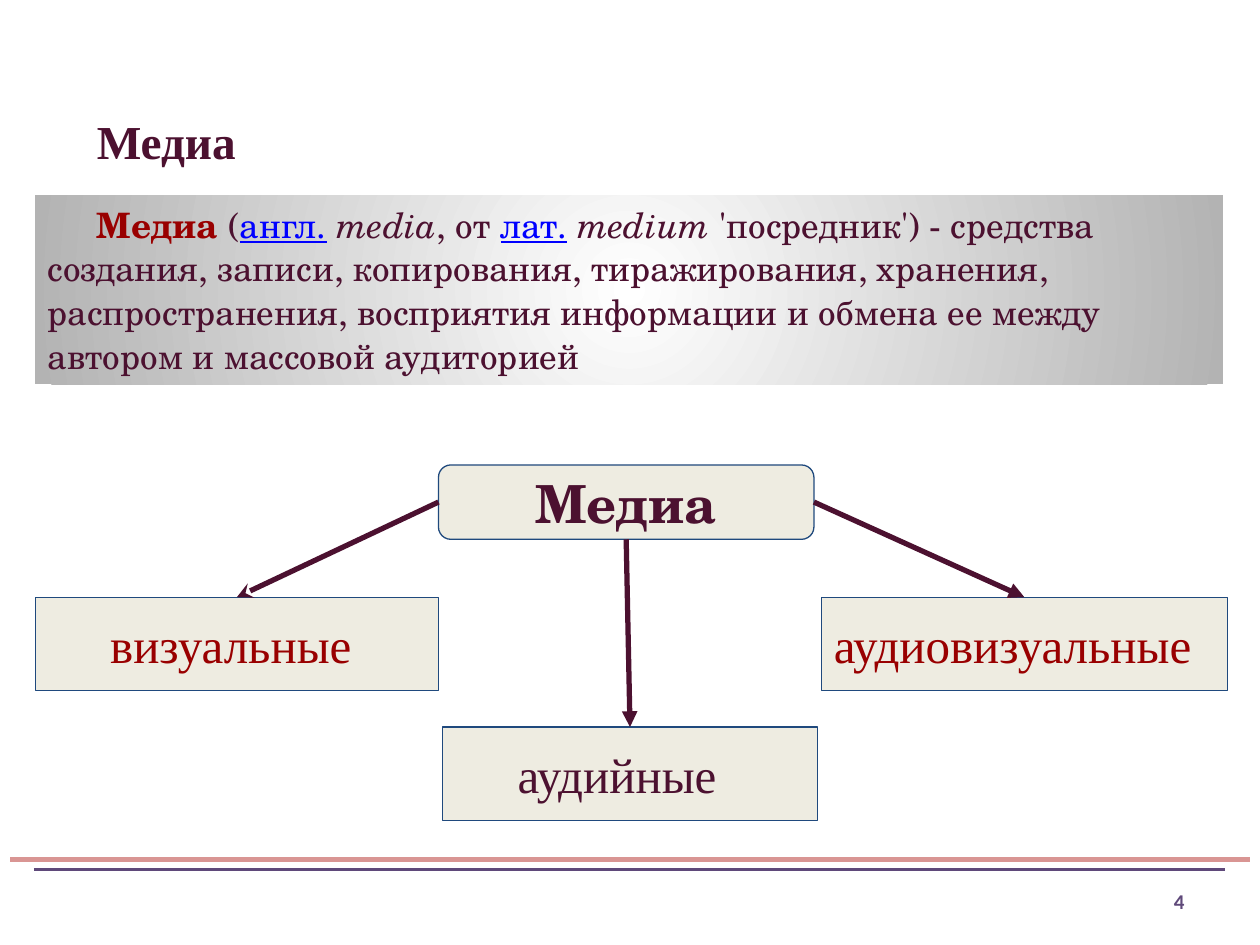
from lxml import etree
from pptx import Presentation
from pptx.dml.color import RGBColor
from pptx.enum.shapes import MSO_CONNECTOR, MSO_SHAPE
from pptx.enum.text import MSO_ANCHOR, PP_ALIGN
from pptx.oxml.ns import qn
from pptx.util import Inches, Pt

LINE = MSO_CONNECTOR.STRAIGHT
RECT, ROUND = MSO_SHAPE.RECTANGLE, MSO_SHAPE.ROUNDED_RECTANGLE
TOP, MID = MSO_ANCHOR.TOP, MSO_ANCHOR.MIDDLE
LEFT, CENTER, RIGHT, JUST = (PP_ALIGN.LEFT, PP_ALIGN.CENTER,
                             PP_ALIGN.RIGHT, PP_ALIGN.JUSTIFY)
PLUM = RGBColor(0x4C, 0x11, 0x30)
RED = RGBColor(0x99, 0x00, 0x00)
BLUE = RGBColor(0x00, 0x00, 0xFF)
NAVY = RGBColor(0x1F, 0x49, 0x7D)
CREAM = RGBColor(0xEE, 0xEC, 0xE1)
ROSE = RGBColor(0xD9, 0x95, 0x93)
VIOLET = RGBColor(0x5F, 0x49, 0x7A)
WHITE = RGBColor(0xFF, 0xFF, 0xFF)
GREY = RGBColor(0xB3, 0xB3, 0xB3)
SERIF, SCHOOL, SANS = "Times New Roman", "TeX Gyre Schola", "Calibri"


def add_run(para, text, font=SERIF, size=28, color=PLUM, bold=False,
            italic=False, under=False):
    run = para.add_run()
    run.text = text
    face = run.font
    face.name, face.size, face.bold = font, Pt(size), bold
    face.italic, face.underline = italic, under
    face.color.rgb = color


def set_para(shape, align=LEFT, anchor=MID, pad=0.05, margin=0, first=0):
    frame = shape.text_frame
    frame.word_wrap = True
    frame.vertical_anchor = anchor
    frame.margin_left = frame.margin_right = Inches(0.1)
    frame.margin_top = frame.margin_bottom = Inches(pad)
    para = frame.paragraphs[0]
    para.alignment = align
    props = para._p.get_or_add_pPr()
    props.set("marL", str(Inches(margin)))
    props.set("indent", str(Inches(first)))
    return para


def add_line(slide, start, end, color, width, head=None):
    line = slide.shapes.add_connector(
        LINE, *(Inches(v) for v in (*start, *end)))
    line.line.color.rgb = color
    line.line.width = Pt(width)
    if head:
        etree.SubElement(line.line._get_or_add_ln(), qn("a:tailEnd"), type=head)
    etree.SubElement(line._element.spPr, qn("a:effectLst"))
    return line


def add_label(slide, box, text, align=LEFT, margin=0, **style):
    label = slide.shapes.add_textbox(*(Inches(v) for v in box))
    add_run(set_para(label, align, margin=margin), text, **style)


def add_box(slide, box, text, kind=RECT, align=CENTER, margin=0, **style):
    node = slide.shapes.add_shape(kind, *(Inches(v) for v in box))
    node.shadow.inherit = False
    node.fill.solid()
    node.fill.fore_color.rgb = CREAM
    node.line.color.rgb = NAVY
    node.line.width = Pt(0.75)
    add_run(set_para(node, align, pad=0.1, margin=margin), text, **style)
    return node


def add_term(slide, box):
    panel = slide.shapes.add_shape(RECT, *(Inches(v) for v in box))
    panel.shadow.inherit = False
    panel.line.fill.background()
    # Radial fill, light in the middle
    panel.fill.gradient()
    for stop, color, pos in zip(panel.fill.gradient_stops, (WHITE, GREY), (0, 1)):
        stop.color.rgb = color
        stop.position = pos
    grad = panel._element.spPr.find(qn("a:gradFill"))
    radial = etree.Element(qn("a:path"), {"path": "circle"})
    etree.SubElement(radial, qn("a:fillToRect"),
                     {side: "50000" for side in "ltrb"})
    grad.replace(grad.find(qn("a:lin")), radial)
    # Definition
    para = set_para(panel, anchor=TOP, first=0.39)
    para.line_spacing = 1.04
    for text, style in (
            ("Медиа ", {"color": RED, "bold": True}),
            ("(", {}),
            ("англ.", {"color": BLUE, "under": True}),
            (" ", {}),
            ("media", {"italic": True}),
            (", от ", {}),
            ("лат.", {"color": BLUE, "under": True}),
            (" ", {}),
            ("medium", {"italic": True}),
            (" 'посредник') - средства создания, записи, копирования, "
             "тиражирования, хранения, распространения, восприятия "
             "информации и обмена ее между автором и массовой аудиторией", {})):
        add_run(para, text, font=SCHOOL, size=20, **style)


def add_tree(slide, box):
    x, y, width, height = box
    root = add_box(slide, (x + 3.2, y, 2.98, 0.59), "Медиа", kind=ROUND,
                   font=SCHOOL, size=30, bold=True)
    row, tall = y + 1.05, 0.74
    sight = add_box(slide, (x, row, 3.2, tall), "визуальные ", color=RED)
    both = add_box(slide, (x + width - 3.22, row, 3.22, tall),
                   "аудиовизуальные", align=JUST, color=RED)
    sound = add_box(slide, (x + 3.23, y + height - tall, 2.98, tall),
                    "аудийные", align=JUST, margin=0.5)
    # Arrows from the root to each kind of media
    for side, leaf, head in ((1, sight, "stealth"), (2, sound, "triangle"),
                             (3, both, "triangle")):
        arrow = add_line(slide, (x, y), (x, row), PLUM, 3, head)
        arrow.begin_connect(root, side)
        arrow.end_connect(leaf, 0)


def add_foot(slide, box):
    x, y, width, height = box
    add_line(slide, (x, y), (x + width, y), ROSE, 3)
    add_line(slide, (x + 0.19, y + 0.08), (x + width - 0.2, y + 0.08), VIOLET, 2)
    add_label(slide, (x + 8.78, y + height - 0.4, 0.64, 0.4), "4", align=RIGHT,
              font=SANS, size=12, color=VIOLET, bold=True)


def main():
    deck = Presentation()
    deck.slide_width, deck.slide_height = Inches(10), Inches(7.5)
    slide = deck.slides.add_slide(deck.slide_layouts[6])
    add_foot(slide, (0.08, 6.82, 9.84, 0.53))
    add_label(slide, (0.17, 0.68, 9.83, 0.87), "Медиа", align=JUST,
              margin=0.5, size=27, bold=True)
    add_term(slide, (0.28, 1.55, 9.43, 1.5))
    add_tree(slide, (0.28, 3.69, 9.46, 2.82))
    deck.save("out.pptx")


if __name__ == "__main__":
    main()
